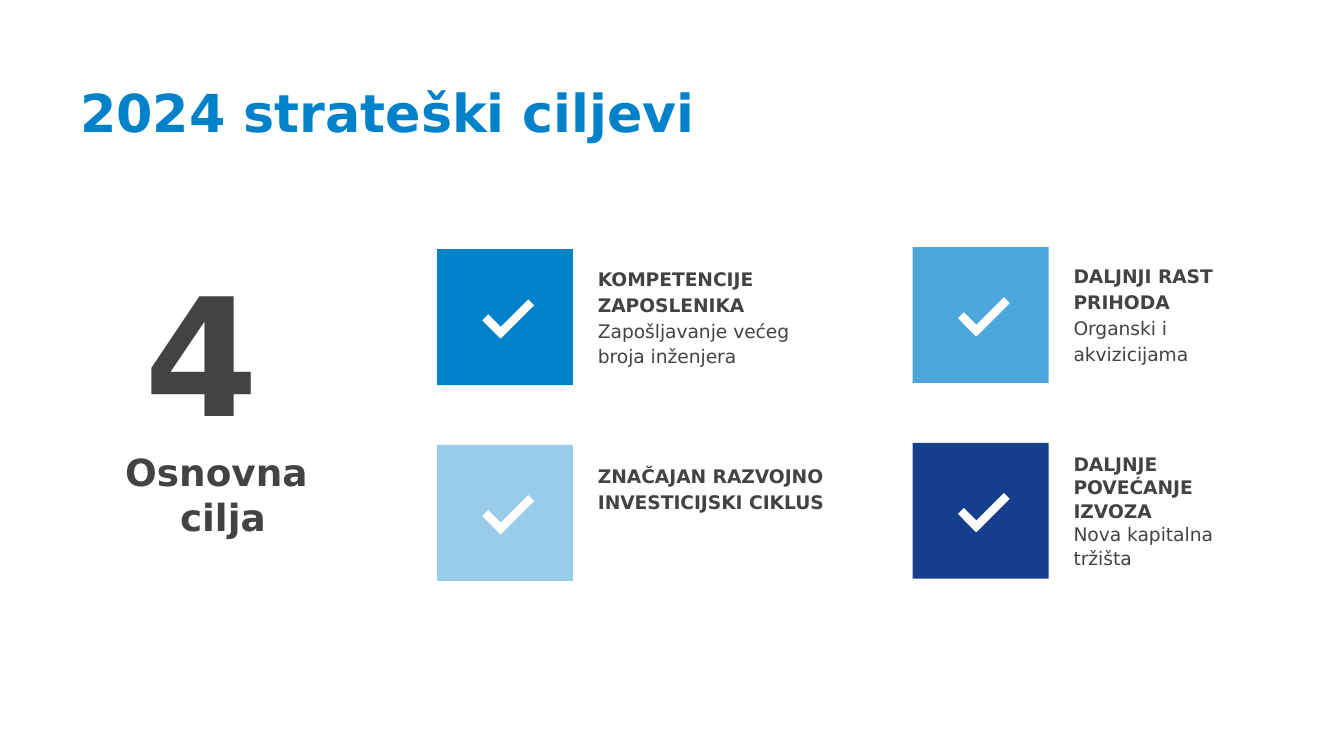
from pptx import Presentation
from pptx.dml.color import RGBColor
from pptx.enum.shapes import MSO_SHAPE
from pptx.enum.text import MSO_ANCHOR, MSO_AUTO_SIZE, PP_ALIGN
from pptx.util import Cm, Pt

BLUE = RGBColor(0x00, 0x82, 0xCA)
SKY = RGBColor(0x4D, 0xA6, 0xD9)
PALE = RGBColor(0x99, 0xCC, 0xEB)
NAVY = RGBColor(0x15, 0x3E, 0x8D)
GREY = RGBColor(0x43, 0x43, 0x43)
WHITE = RGBColor(0xFF, 0xFF, 0xFF)

FONT = "DejaVu Sans"
INSET = Cm(0.25)
TILE = 2.57
LABEL_OFFSET = 2.79
ROW_PITCH = 3.7
COLUMNS = [(8.26, 4.71), (17.25, 4.67)]  # left and top of each column of tiles

# Check mark strokes inside a tile: left, top, length, rotation
STROKE_WIDTH = 0.16
STROKES = [(0.84, 1.38, 0.48, 45), (1.02, 1.24, 0.89, 315)]

# Column, row, tile colour, label top, width, height, line spacing, headings, detail
GOALS = [
    (0, 0, BLUE, 4.75, 4.78, 2.82, 1.15,
     ["KOMPETENCIJE", "ZAPOSLENIKA"], ["Zapošljavanje većeg broja inženjera"]),
    (0, 1, PALE, 8.48, 4.83, 2.29, 1.15,
     ["ZNAČAJAN RAZVOJNO INVESTICIJSKI CIKLUS"], []),
    (1, 0, SKY, 4.7, 4.19, 2.82, 1.15,
     ["DALJNJI RAST PRIHODA"], ["Organski i akvizicijama"]),
    (1, 1, NAVY, 8.28, 4.17, 2.77, 1.05,
     ["DALJNJE POVEĆANJE IZVOZA"], ["Nova kapitalna tržišta"]),
]


def apply(target, formats):
    for name, value in formats.items():
        setattr(target, name, value)


def add_run(paragraph, text, size, color=GREY, bold=True):
    run = paragraph.add_run()
    run.text = text
    apply(run.font, {"name": FONT, "size": Pt(size), "bold": bold})
    run.font.color.rgb = color
    return run


def add_text_frame(slide, left, top, width, height, **formats):
    box = slide.shapes.add_textbox(Cm(left), Cm(top), Cm(width), Cm(height))
    apply(box.text_frame, {"word_wrap": True, "vertical_anchor": MSO_ANCHOR.TOP,
                           **formats})
    return box.text_frame


def add_inset_frame(slide, left, top, width, height):
    sides = ("margin_left", "margin_top", "margin_right", "margin_bottom")
    return add_text_frame(slide, left, top, width, height,
                          **dict.fromkeys(sides, INSET))


def add_rectangle(shapes, left, top, width, height, color, rotation=0):
    rectangle = shapes.add_shape(MSO_SHAPE.RECTANGLE, Cm(left), Cm(top),
                                 Cm(width), Cm(height))
    rectangle.rotation = rotation
    rectangle.fill.solid()
    rectangle.fill.fore_color.rgb = color
    rectangle.line.fill.background()
    rectangle.shadow.inherit = False


def add_check_tile(slide, left, top, color):
    add_rectangle(slide.shapes, left, top, TILE, TILE, color)
    check = slide.shapes.add_group_shape()
    for dx, dy, length, rotation in STROKES:
        add_rectangle(check.shapes, left + dx, top + dy, length, STROKE_WIDTH,
                      WHITE, rotation)


def add_goal_label(slide, left, top, width, height, spacing, headings, details):
    frame = add_inset_frame(slide, left, top, width, height)
    for index, text in enumerate(headings + details):
        paragraph = frame.add_paragraph() if index else frame.paragraphs[0]
        paragraph.line_spacing = spacing
        add_run(paragraph, text, 10, bold=index < len(headings))


def add_goal_count(slide):
    frame = add_text_frame(slide, 0.86, 4.65, 6.71, 5.74,
                           auto_size=MSO_AUTO_SIZE.SHAPE_TO_FIT_TEXT)
    count = frame.paragraphs[0]
    add_run(count, "4", 88)
    add_run(count, " ", 72, bold=False)
    for word in ("Osnovna ", "cilja"):
        add_run(frame.add_paragraph(), word, 20)
    for paragraph in frame.paragraphs:
        paragraph.alignment = PP_ALIGN.CENTER


def main():
    presentation = Presentation()
    apply(presentation, {"slide_width": Cm(25.4), "slide_height": Cm(14.29)})
    slide = presentation.slides.add_slide(presentation.slide_layouts[6])

    # Title
    title = add_inset_frame(slide, 1.27, 1.27, 14.55, 3.07)
    add_run(title.paragraphs[0], "2024 strateški ciljevi", 28, BLUE)

    # Number of goals
    add_goal_count(slide)

    # Goals in a two by two grid
    for column, row, color, label_top, *label in GOALS:
        left, top = COLUMNS[column]
        add_check_tile(slide, left, top + row * ROW_PITCH, color)
        add_goal_label(slide, left + LABEL_OFFSET, label_top, *label)

    presentation.save("out.pptx")


if __name__ == "__main__":
    main()
